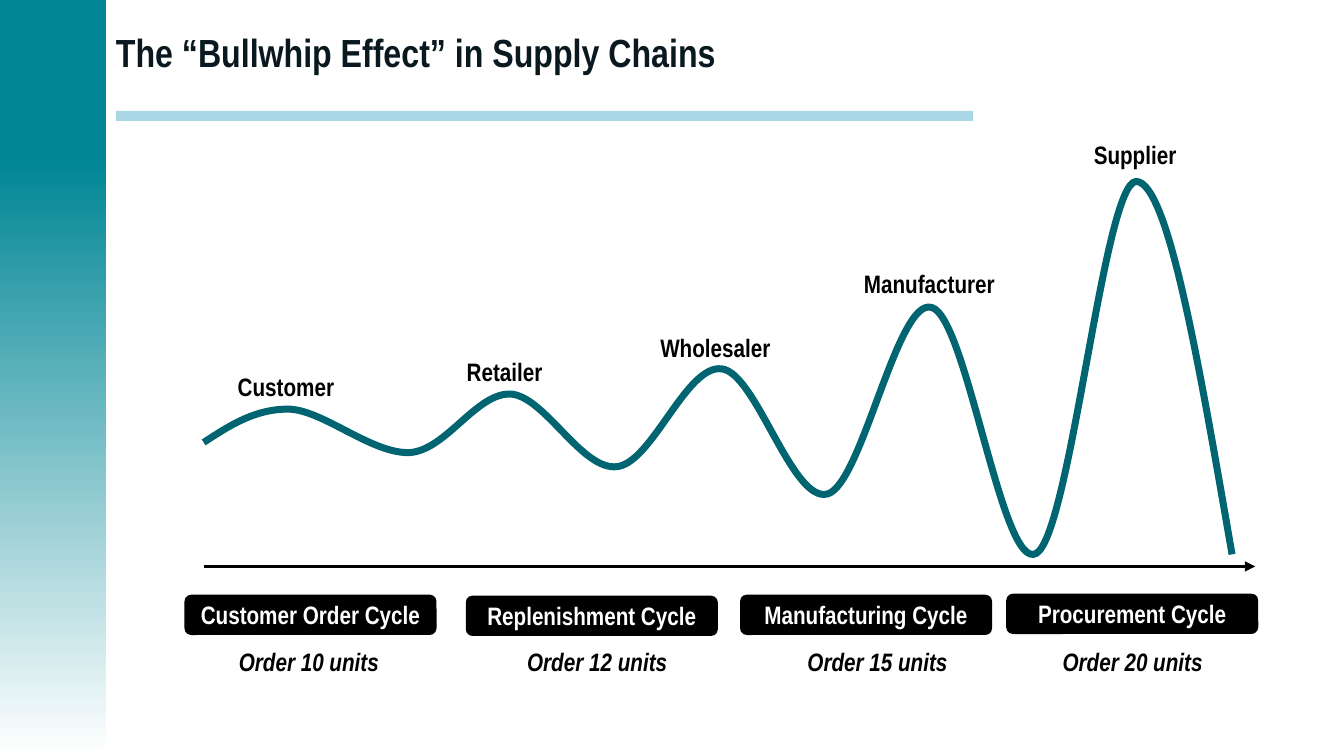
"""Build the slide on the bullwhip effect in supply chains."""
from lxml import etree
from pptx import Presentation
from pptx.dml.color import RGBColor
from pptx.enum import shapes, text
from pptx.oxml import ns
from pptx.util import Inches, Pt


def paint(target, color):
    target.solid()
    target.fore_color.rgb = RGBColor.from_string(color)


def write(frame, words, color="000000", size=18, italic=None, align=None):
    frame.text = words
    line = frame.paragraphs[0]
    line.alignment = align
    line.font.name = "Arial Narrow"
    line.font.size = Pt(size)
    line.font.bold = True
    line.font.italic = italic
    paint(line.font.fill, color)


deck = Presentation()
deck.slide_width, deck.slide_height = Inches(13.33), Inches(7.5)
slide = deck.slides.add_slide(deck.slide_layouts[5])

bands = []
for left, top, width, height, color in [
    (-0.02, -0.01, 1.07, 1.58, "008695"),
    (-0.02, 1.57, 1.07, 5.93, "008695"),
    (1.15, 1.1, 8.5, 0.1, "AAD7E6"),
]:
    band = slide.shapes.add_shape(
        shapes.MSO_SHAPE.RECTANGLE, Inches(left), Inches(top), Inches(width), Inches(height))
    band.shadow.inherit = False
    band.line.fill.background()
    paint(band.fill, color)
    bands.append(band)

fade = bands[1].fill
fade.gradient()
fade.gradient_angle = 270
for stop, color in zip(fade.gradient_stops, ("008695", "FFFFFF")):
    stop.color.rgb = RGBColor.from_string(color)

title = slide.shapes.title
title.left, title.top = Inches(1.05), Inches(0.01)
title.width, title.height = Inches(11.98), Inches(1)
title.text_frame.vertical_anchor = text.MSO_ANCHOR.MIDDLE
write(title.text_frame, "The “Bullwhip Effect” in Supply Chains", "09191F", 28,
      align=text.PP_ALIGN.LEFT)

# Each row holds two control points and the end of one Bézier segment.
demand_curve = [
    (2.28, 4.22), (2.54, 4.05), (2.88, 4.06),
    (3.22, 4.08), (3.7, 4.51), (4.07, 4.49),
    (4.43, 4.46), (4.73, 3.89), (5.07, 3.91),
    (5.41, 3.94), (5.77, 4.67), (6.12, 4.63),
    (6.47, 4.59), (6.81, 3.61), (7.16, 3.66),
    (7.5, 3.7), (7.86, 5), (8.21, 4.9),
    (8.55, 4.8), (8.9, 2.95), (9.24, 3.05),
    (9.59, 3.14), (9.94, 5.69), (10.28, 5.49),
    (10.62, 5.28), (10.95, 1.8), (11.27, 1.8),
    (11.59, 1.81), (11.9, 3.66), (12.22, 5.5),
]
builder = slide.shapes.build_freeform(Inches(2.02), Inches(4.39))
builder.add_line_segments([(Inches(x), Inches(y)) for x, y in demand_curve], close=False)
wave = builder.convert_to_shape()
wave.shadow.inherit = False
wave.fill.background()
paint(wave.line.fill, "006570")
wave.line.width = Pt(5)
wave.height = Inches(3.7)
outline = next(wave.element.iter(ns.qn("a:path")))
outline.set("h", str(wave.height))
steps = outline.findall(ns.qn("a:lnTo"))
for first in range(0, len(steps), 3):
    bend = etree.SubElement(outline, ns.qn("a:cubicBezTo"))
    for step in steps[first:first + 3]:
        bend.append(step[0])
        outline.remove(step)

axis = slide.shapes.add_connector(
    shapes.MSO_CONNECTOR.STRAIGHT, Inches(2.02), Inches(5.62), Inches(12.45), Inches(5.62))
paint(axis.line.fill, "000000")
axis.line.width = Pt(2.5)
etree.SubElement(axis.line._get_or_add_ln(), ns.qn("a:tailEnd"), type="triangle")
etree.SubElement(axis.element.spPr, ns.qn("a:effectLst"))

for words, left, top, width, italic in [
    ("Customer", 2.26, 3.63, 1.17, None),
    ("Retailer", 4.53, 3.49, 0.96, None),
    ("Wholesaler", 6.45, 3.25, 1.31, None),
    ("Manufacturer", 8.47, 2.61, 1.51, None),
    ("Supplier", 10.75, 1.33, 1.03, None),
    ("Order 10 units", 2.27, 6.36, 1.61, True),
    ("Order 12 units", 5.13, 6.36, 1.61, True),
    ("Order 15 units", 7.91, 6.36, 1.61, True),
    ("Order 20 units", 10.44, 6.36, 1.61, True),
]:
    label = slide.shapes.add_textbox(Inches(left), Inches(top), Inches(width), Inches(0.4))
    label.text_frame.word_wrap = False
    label.text_frame.auto_size = text.MSO_AUTO_SIZE.SHAPE_TO_FIT_TEXT
    write(label.text_frame, words, italic=italic)

for words, left, top in [
    ("Customer Order Cycle", 1.83, 5.9),
    ("Replenishment Cycle", 4.62, 5.91),
    ("Manufacturing Cycle", 7.34, 5.9),
    ("Procurement Cycle", 9.98, 5.89),
]:
    cycle = slide.shapes.add_shape(
        shapes.MSO_SHAPE.ROUNDED_RECTANGLE, Inches(left), Inches(top), Inches(2.5), Inches(0.4))
    cycle.shadow.inherit = False
    cycle.line.fill.background()
    paint(cycle.fill, "000000")
    cycle.text_frame.vertical_anchor = text.MSO_ANCHOR.MIDDLE
    write(cycle.text_frame, words, "FFFFFF", align=text.PP_ALIGN.CENTER)

deck.save("out.pptx")
